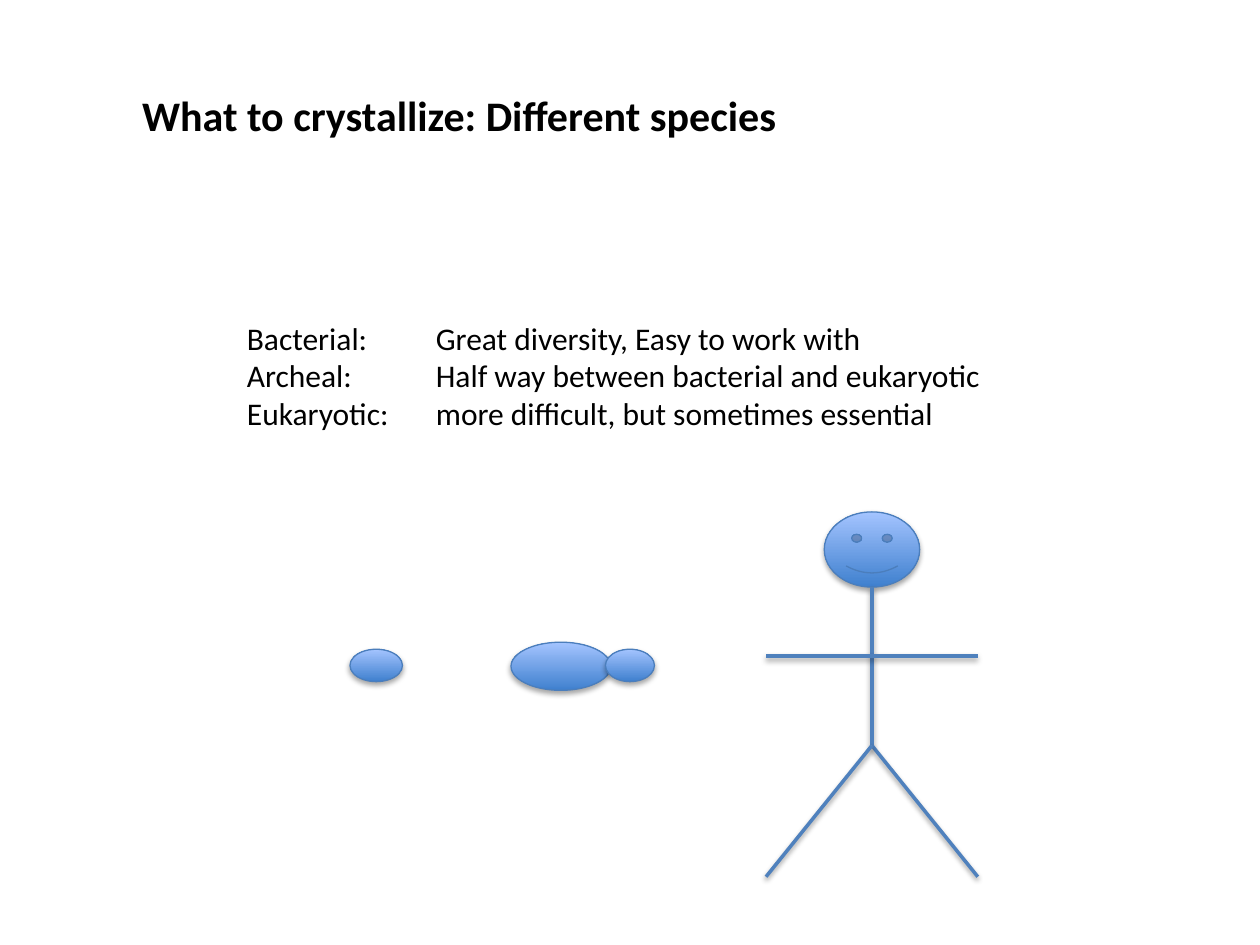
from lxml.etree import SubElement as Sub
from pptx import Presentation
from pptx.dml.color import RGBColor
from pptx.enum.shapes import MSO_CONNECTOR as Link, MSO_SHAPE as Kind
from pptx.enum.text import MSO_ANCHOR as Anchor, MSO_AUTO_SIZE as Fit, PP_ALIGN as Align
from pptx.oxml.ns import qn
from pptx.util import Pt

BLACK = RGBColor(0x00, 0x00, 0x00)
DARK = RGBColor(0x3F, 0x80, 0xCE)
LIGHT = RGBColor(0xA4, 0xC4, 0xFF)
EDGE = RGBColor(0x4B, 0x7E, 0xBC)
LIMB = RGBColor(0x4F, 0x81, 0xBD)
TAB = Pt(108)

SPECIES = [
    ("Bacterial:", "Great diversity, Easy to work with"),
    ("Archeal:", "Half way between bacterial and eukaryotic"),
    ("Eukaryotic:", "more difficult, but sometimes essential"),
]
CELLS = [
    (200, 371, 30, 18.5),
    (292, 367, 57, 27.5),
    (346, 371, 28, 18.5),
]


def set_frame(shape):
    frame = shape.text_frame
    frame.word_wrap = False
    frame.auto_size = Fit.SHAPE_TO_FIT_TEXT
    frame.vertical_anchor = Anchor.TOP
    return frame


def add_run(para, text, size, bold=False):
    para.alignment = Align.LEFT
    run = para.add_run()
    run.text = text
    font = run.font
    font.name = "Calibri"
    font.size = Pt(size)
    font.bold = bold
    font.color.rgb = BLACK


def set_title(slide, text):
    title = slide.shapes.title
    title.left, title.top, title.width, title.height = map(Pt, (74, 47.5, 383, 36))
    add_run(set_frame(title).paragraphs[0], text, 24, True)


def add_list(slide, rows):
    box = slide.shapes.add_textbox(Pt(134), Pt(178.5), Pt(439), Pt(72.75))
    frame = set_frame(box)
    for i, (name, note) in enumerate(rows):
        para = frame.add_paragraph() if i else frame.paragraphs[0]
        tabs = Sub(para._p.get_or_add_pPr(), qn("a:tabLst"))
        Sub(tabs, qn("a:tab"), pos=str(TAB), algn="l")
        add_run(para, f"{name}\t{note}", 18)


def add_shade(shape, dist, alpha):
    effects = Sub(shape._element.spPr, qn("a:effectLst"))
    shade = Sub(effects, qn("a:outerShdw"), blurRad=str(Pt(3.1)), dist=str(Pt(dist)),
                dir="5400000", rotWithShape="0")
    color = Sub(shade, qn("a:srgbClr"), val=str(BLACK))
    Sub(color, qn("a:alpha"), val=str(alpha * 1000))


def add_blob(shapes, kind, area):
    blob = shapes.add_shape(kind, *map(Pt, area))
    blob.fill.gradient()
    blob.fill.gradient_angle = 90
    for stop, color, place in zip(blob.fill.gradient_stops, (DARK, LIGHT), (0, 1)):
        stop.color.rgb = color
        stop.position = place
    blob.line.color.rgb = EDGE
    blob.line.width = Pt(0.75)
    add_shade(blob, 1.8, 35)


def add_limb(shapes, start, end):
    limb = shapes.add_connector(Link.STRAIGHT, *map(Pt, start + end))
    limb.line.color.rgb = LIMB
    limb.line.width = Pt(2)
    add_shade(limb, 1.6, 38)


def add_man(slide):
    shapes = slide.shapes.add_group_shape().shapes
    mid, reach = 498.25, 60.5
    left, right = mid - reach, mid + reach
    neck, arm, hip, foot = 335.5, 375, 426, 501
    add_blob(shapes, Kind.SMILEY_FACE, (mid - 27.25, neck - 43, 54.5, 43))
    add_limb(shapes, (mid, neck), (mid, hip))
    for side in (right, left):
        add_limb(shapes, (mid, hip), (side, foot))
    add_limb(shapes, (left, arm), (right, arm))


def main():
    deck = Presentation()
    deck.slide_width, deck.slide_height = Pt(720), Pt(540)
    slide = deck.slides.add_slide(deck.slide_layouts[5])
    set_title(slide, "What to crystallize: Different species")
    add_list(slide, SPECIES)
    for area in CELLS:
        add_blob(slide.shapes, Kind.OVAL, area)
    add_man(slide)
    deck.save("out.pptx")


if __name__ == "__main__":
    main()
